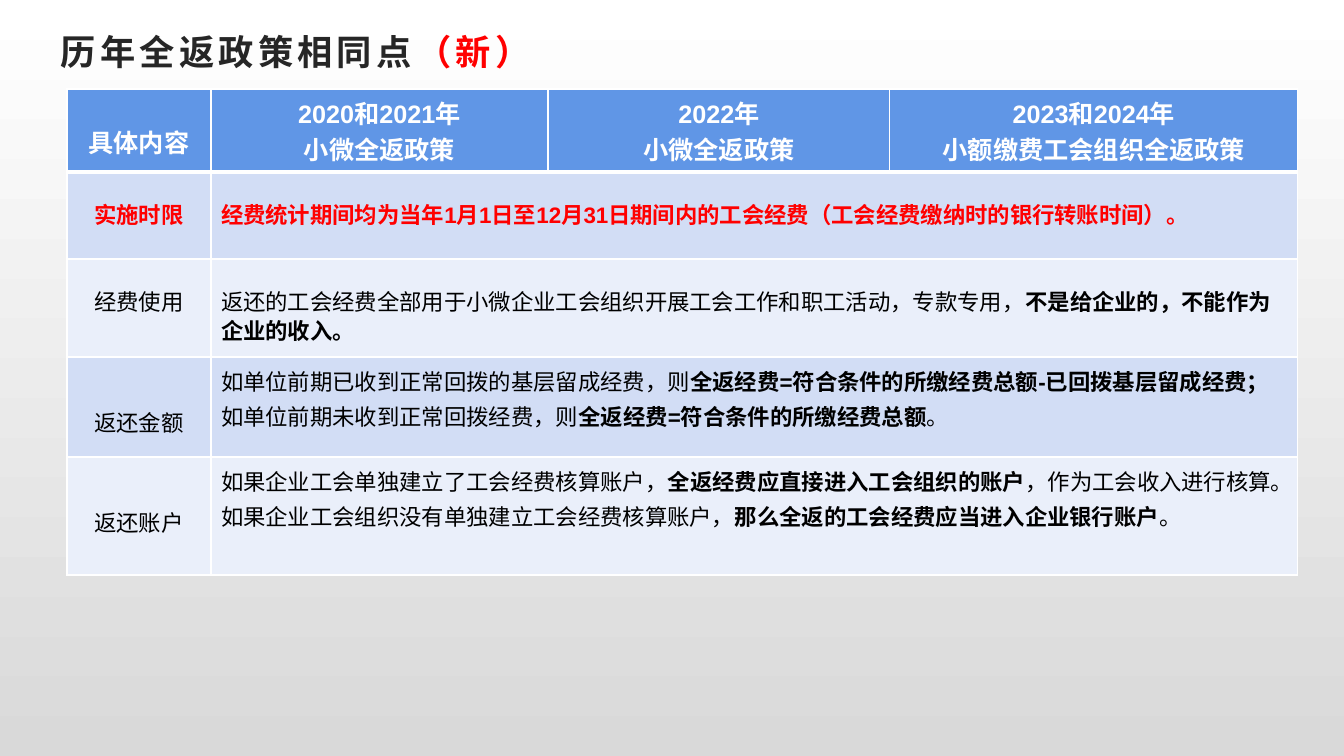
from lxml import etree
from pptx import Presentation
from pptx.dml.color import RGBColor
from pptx.enum.lang import MSO_LANGUAGE_ID
from pptx.enum.text import MSO_ANCHOR, PP_ALIGN
from pptx.oxml.ns import qn
from pptx.util import Pt

PX = 914400 / 100.8
CENTER, LEFT = PP_ALIGN.CENTER, PP_ALIGN.LEFT
MIDDLE = MSO_ANCHOR.MIDDLE
CHINESE = MSO_LANGUAGE_ID.SIMPLIFIED_CHINESE

WHITE = RGBColor(0xFF, 0xFF, 0xFF)
BLACK = RGBColor(0, 0, 0)
RED = RGBColor(0xFF, 0, 0)
DARK = RGBColor(0x26, 0x26, 0x26)
GREY = RGBColor(0xD9, 0xD9, 0xD9)
BLUE = RGBColor(0x60, 0x96, 0xE6)
BANDS = [RGBColor(0xD2, 0xDD, 0xF5), RGBColor(0xEA, 0xEF, 0xFA)]

COL_WIDTHS = [144, 337, 342, 408]
HEADER_HEIGHT = 83
HEADERS = [
    ["具体内容"],
    ["2020和2021年", "小微全返政策"],
    ["2022年", "小微全返政策"],
    ["2023和2024年", "小额缴费工会组织全返政策"],
]
HEADER_FORMAT = {"size": Pt(18), "bold": True, "color": WHITE}
BODY_FORMAT = {"size": Pt(16), "bold": False, "color": BLACK}
ALERT_FORMAT = {"size": Pt(16), "bold": True, "color": RED}

ROWS = [
    {"height": 87, "label": "实施时限", "tops": (28, 28), "spacing": 0.9, "format": ALERT_FORMAT,
     "lines": [[("经费统计期间均为当年1月1日至12月31日期间内的工会经费（工会经费缴纳时的银行转账时间）。", True)]]},
    {"height": 98, "label": "经费使用", "tops": (28, 28), "spacing": 0.9, "format": BODY_FORMAT,
     "lines": [[("返还的工会经费全部用于小微企业工会组织开展工会工作和职工活动，专款专用，", False),
                ("不是给企业的，不能作为企业的收入。", True)]]},
    {"height": 100, "label": "返还金额", "tops": (51, 5), "spacing": Pt(25), "format": BODY_FORMAT,
     "lines": [[("如单位前期已收到正常回拨的基层留成经费，则", False),
                ("全返经费=符合条件的所缴经费总额-已回拨基层留成经费；", True)],
               [("如单位前期未收到正常回拨经费，则", False),
                ("全返经费=符合条件的所缴经费总额", True), ("。", False)]]},
    {"height": 118, "label": "返还账户", "tops": (51, 5), "spacing": Pt(25), "format": BODY_FORMAT,
     "lines": [[("如果企业工会单独建立了工会经费核算账户，", False),
                ("全返经费应直接进入工会组织的账户", True), ("，作为工会收入进行核算。", False)],
               [("如果企业工会组织没有单独建立工会经费核算账户，", False),
                ("那么全返的工会经费应当进入企业银行账户", True), ("。", False)]]},
]


def px(n):
    return round(n * PX)


def add_run(p, text, fmt):
    r = p.add_run()
    r.text = text
    for name, value in {"name": "Arial", "language_id": CHINESE, **fmt}.items():
        if name == "color":
            r.font.color.rgb = value
        else:
            setattr(r.font, name, value)
    return r


def set_borders(cell, widths):
    tc_pr = cell._tc.get_or_add_tcPr()
    for side, width in widths.items():
        ln = etree.SubElement(tc_pr, qn(f"a:ln{side}"), w=str(Pt(width)))
        fill = etree.SubElement(ln, qn("a:solidFill"))
        etree.SubElement(fill, qn("a:srgbClr"), val=str(WHITE))


def fill_cell(cell, lines, fmt, align, spacing, top):
    cell.margin_top = px(top)
    tf = cell.text_frame
    for i, runs in enumerate(lines):
        p = tf.add_paragraph() if i else tf.paragraphs[0]
        p.alignment = align
        p.line_spacing = spacing
        for text, bold in runs:
            add_run(p, text, {**fmt, "bold": bold})


def add_background(slide):
    fill = slide.background.fill
    fill.gradient()
    fill.gradient_angle = 270
    for stop, position, color in zip(fill.gradient_stops, (0, 1), (WHITE, GREY)):
        stop.position = position
        stop.color.rgb = color


def add_title(slide, x, y, w, h):
    tf = slide.shapes.add_textbox(px(x), px(y), px(w), px(h)).text_frame
    tf.word_wrap = True
    tf.vertical_anchor = MIDDLE
    for text, color in (("历年全返政策相同点", DARK), ("（新）", RED)):
        r = add_run(tf.paragraphs[0], text, {"size": Pt(25.2), "bold": True, "color": color})
        r.font._element.set("spc", "300")


def add_policy_table(slide, x, y):
    heights = [HEADER_HEIGHT] + [row["height"] for row in ROWS]
    table = slide.shapes.add_table(len(heights), len(COL_WIDTHS), px(x), px(y),
                                   px(sum(COL_WIDTHS)), px(sum(heights))).table
    for column, width in zip(table.columns, COL_WIDTHS):
        column.width = px(width)
    for i, height in enumerate(heights):
        table.rows[i].height = px(height)
        for cell in table.rows[i].cells:
            set_borders(cell, {"L": 1, "R": 1, "T": 3 if i == 1 else 1, "B": 1 if i else 3})
            cell.fill.solid()
            cell.fill.fore_color.rgb = BANDS[(i - 1) % 2] if i else BLUE

    for j, header in enumerate(HEADERS):
        lines = [[(text, True)] for text in header]
        fill_cell(table.cell(0, j), lines, HEADER_FORMAT, CENTER, 1.0, 5 if j else 34)

    for i, row in enumerate(ROWS, 1):
        fmt = row["format"]
        label, detail = table.cell(i, 0), table.cell(i, 1)
        detail.merge(table.cell(i, len(COL_WIDTHS) - 1))
        label_top, detail_top = row["tops"]
        fill_cell(label, [[(row["label"], fmt["bold"])]], fmt, CENTER, 0.9, label_top)
        fill_cell(detail, row["lines"], fmt, LEFT, row["spacing"], detail_top)


def main():
    prs = Presentation()
    prs.slide_width, prs.slide_height = px(1344), px(756)
    slide = prs.slides.add_slide(prs.slide_layouts[6])
    add_background(slide)
    add_title(slide, 51, 22, 1210, 58)
    add_policy_table(slide, 67, 89)
    prs.save("out.pptx")


if __name__ == "__main__":
    main()
